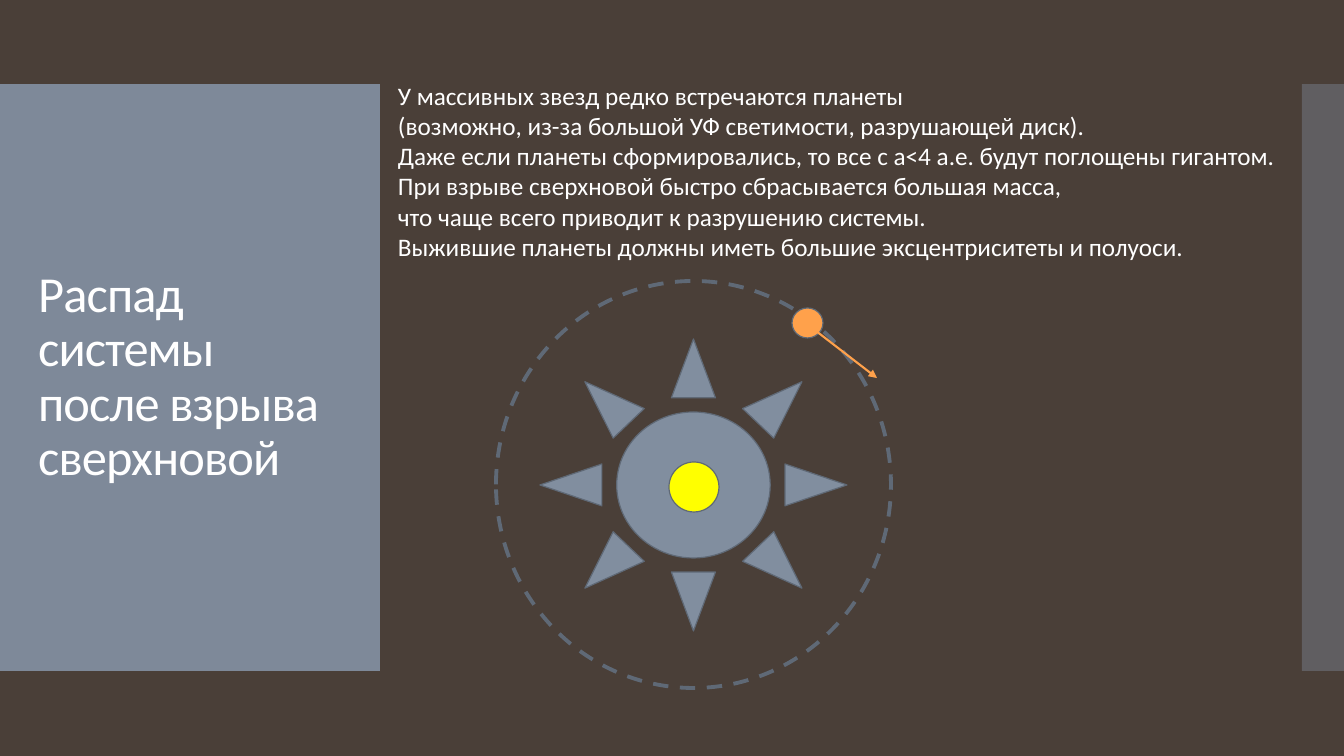
from lxml.etree import SubElement
from pptx import Presentation
from pptx.dml.color import RGBColor
from pptx.enum.dml import MSO_LINE
from pptx.enum.shapes import MSO_CONNECTOR, MSO_SHAPE
from pptx.enum.text import MSO_ANCHOR, MSO_AUTO_SIZE, PP_ALIGN
from pptx.oxml.ns import qn
from pptx.util import Emu, Pt

EMU_PER_PX = 914400 / 100.8
TITLE_ONLY = 5
COLORS = {
    "background": "4A3F38",
    "slate": "818E9F",
    "outline": "5F6976",
    "star": "FFFF00",
    "planet": "FFA14B",
    "text": "FFFFFF",
}
TITLE = "Распад системы после взрыва сверхновой"
PARAGRAPHS = [
    "\n".join([
        "У массивных звезд редко встречаются планеты",
        "(возможно, из-за большой УФ светимости, разрушающей диск).",
        "Даже если планеты сформировались, то все с a<4 а.е. будут поглощены гигантом.",
        "При взрыве сверхновой быстро сбрасывается большая масса,",
        "что чаще всего приводит к разрушению системы.",
    ]),
    "Выжившие планеты должны иметь большие эксцентриситеты и полуоси.",
]


def px(*lengths):
    return [Emu(round(length * EMU_PER_PX)) for length in lengths]


def color(name):
    return RGBColor.from_string(COLORS[name])


def apply(target, values):
    for name, value in values.items():
        setattr(target, name, value)


class SlideBuilder:
    font_name = "Calibri"

    def __init__(self, presentation):
        self.slide = presentation.slides.add_slide(presentation.slide_layouts[TITLE_ONLY])
        fill = self.slide.background.fill
        fill.solid()
        fill.fore_color.rgb = color("background")

    def style_font(self, font, size):
        apply(font, {"name": self.font_name, "size": Pt(size), "bold": False})
        font.color.rgb = color("text")

    def style_line(self, line, name, width):
        line.color.rgb = color(name)
        line.width = Pt(width)

    def title(self, text, box):
        shape = self.slide.shapes.title
        self.slide.shapes._spTree.append(shape._element)
        apply(shape, dict(zip(("left", "top", "width", "height"), px(*box))))
        apply(shape.text_frame, {
            "text": text,
            "word_wrap": True,
            "auto_size": MSO_AUTO_SIZE.NONE,
            "vertical_anchor": MSO_ANCHOR.MIDDLE,
        })
        paragraph = shape.text_frame.paragraphs[0]
        apply(paragraph, {"alignment": PP_ALIGN.LEFT, "line_spacing": 0.9, "space_before": Pt(0)})
        run = paragraph.runs[0]
        self.style_font(run.font, 36)
        run._r.get_or_add_rPr().set("spc", "-60")

    def text(self, paragraphs, box, size):
        frame = self.slide.shapes.add_textbox(*px(*box)).text_frame
        apply(frame, {"word_wrap": False, "vertical_anchor": MSO_ANCHOR.TOP})
        for index, text in enumerate(paragraphs):
            paragraph = frame.add_paragraph() if index else frame.paragraphs[0]
            apply(paragraph, {"text": text, "alignment": PP_ALIGN.LEFT})
            for run in paragraph.runs:
                self.style_font(run.font, size)

    def shape(self, preset, box, fill=None, alpha=None, outline=None, width=0.85, dash=None):
        shape = self.slide.shapes.add_shape(preset, *px(*box))
        shape.shadow.inherit = False
        if fill:
            shape.fill.solid()
            shape.fill.fore_color.rgb = color(fill)
        else:
            shape.fill.background()
        if alpha:
            fill_color = shape._element.spPr.find(qn("a:solidFill"))[0]
            SubElement(fill_color, qn("a:alpha"), val=str(alpha * 1000))
        if outline:
            self.style_line(shape.line, outline, width)
        else:
            shape.line.fill.background()
        if dash:
            shape.line.dash_style = dash

    def arrow(self, start, end, name, width):
        connector = self.slide.shapes.add_connector(
            MSO_CONNECTOR.STRAIGHT, *px(*start), *px(*end))
        self.style_line(connector.line, name, width)
        SubElement(connector.line._get_or_add_ln(), qn("a:tailEnd"), type="triangle")
        SubElement(connector._element.spPr, qn("a:effectLst"))


def main():
    presentation = Presentation()
    slide_size = px(1344, 756)
    apply(presentation, dict(zip(("slide_width", "slide_height"), slide_size)))
    builder = SlideBuilder(presentation)

    builder.shape(MSO_SHAPE.RECTANGLE, (0, 84, 380, 587), "slate", alpha=95)
    builder.shape(MSO_SHAPE.RECTANGLE, (1302, 84, 42, 587), "slate", alpha=40)
    builder.title(TITLE, (28, 124, 325, 507))
    builder.text(PARAGRAPHS, (388, 75, 922, 224), 18)

    builder.shape(MSO_SHAPE.SUN, (540, 339, 307, 292), "slate", outline="outline")
    builder.shape(MSO_SHAPE.OVAL, (669, 462, 50, 50), "star", outline="outline")
    builder.shape(MSO_SHAPE.OVAL, (496, 281, 395, 407),
                  outline="outline", width=2.75, dash=MSO_LINE.DASH)
    builder.shape(MSO_SHAPE.OVAL, (792, 308, 31, 30), "planet", outline="outline")
    builder.arrow((807, 324), (877, 378), "planet", 1.5)

    presentation.save("out.pptx")


if __name__ == "__main__":
    main()
